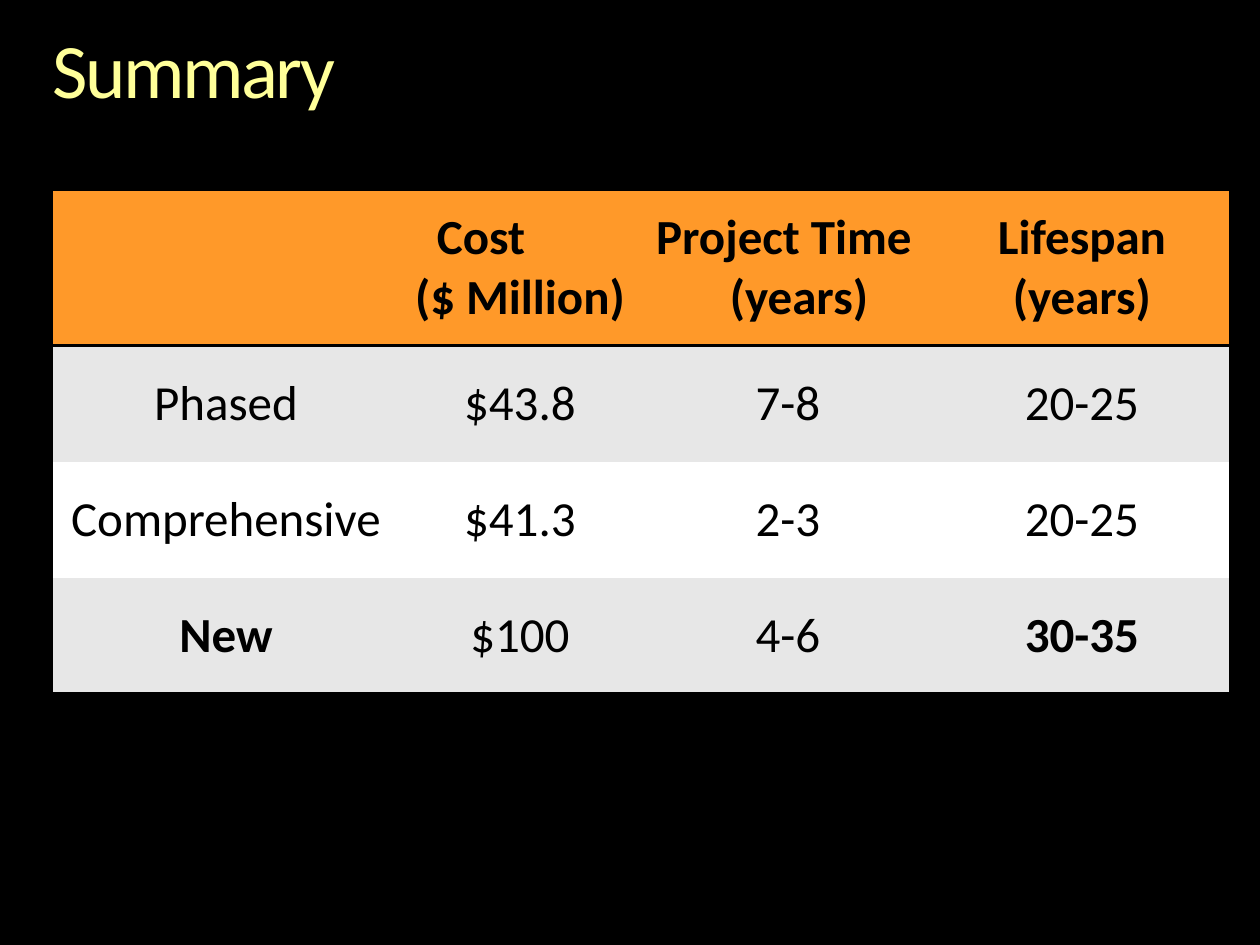
from dataclasses import dataclass

import lxml.etree
import pptx
import pptx.dml.color
import pptx.enum.text
import pptx.oxml.ns
import pptx.util

EMU_PER_PX = 914400 / 126
FONT = "Calibri"
COLORS = {
    "background": "000000",
    "title": "FFFF99",
    "header": "FF9929",
    "band": "E7E7E7",
    "plain": "FFFFFF",
    "text": "000000",
    "rule": "000000",
}
NO_STYLE = "{2D5ABB26-0587-4C30-8999-92F81FD0307C}"
COLUMN_WIDTHS = [346, 242, 294, 294]
ROW_HEIGHTS = [157, 116, 116, 116]


@dataclass(frozen=True)
class Line:
    text: str
    left: int = 0
    right: int = 0
    bold: bool = False


@dataclass(frozen=True)
class Row:
    cells: list[list[Line]]
    fill: str
    rules: tuple[str, ...] = ()


def px(length: int) -> int:
    return round(length * EMU_PER_PX)


def color(name: str) -> pptx.dml.color.RGBColor:
    return pptx.dml.color.RGBColor.from_string(COLORS[name])


def values(*texts: str, bold: tuple[str, ...] = ()) -> list[list[Line]]:
    return [[Line(text, bold=text in bold)] for text in texts]


HEADINGS = [
    [],
    [Line("Cost", right=78, bold=True), Line("($ Million)", bold=True)],
    [Line("Project Time", right=8, bold=True), Line("(years)", left=22, bold=True)],
    [Line("Lifespan (years)", bold=True)],
]
ROWS = [
    Row(HEADINGS, "header", ("lnT", "lnB")),
    Row(values("Phased", "$43.8", "7-8", "20-25"), "band"),
    Row(values("Comprehensive", "$41.3", "2-3", "20-25"), "plain"),
    Row(values("New", "$100", "4-6", "30-35", bold=("New", "30-35")), "band", ("lnB",)),
]


def add_run(paragraph, text: str, size: int, color_name: str, bold: bool = False):
    run = paragraph.add_run()
    run.text = text
    run.font.name = FONT
    run.font.size = pptx.util.Pt(size)
    run.font.bold = bold
    run.font.color.rgb = color(color_name)
    return run


def add_rule(cell, side: str) -> None:
    qn = pptx.oxml.ns.qn
    properties = cell._tc.get_or_add_tcPr()
    line = lxml.etree.SubElement(properties, qn(f"a:{side}"), w=str(pptx.util.Pt(2)))
    fill = lxml.etree.SubElement(line, qn("a:solidFill"))
    lxml.etree.SubElement(fill, qn("a:srgbClr"), val=COLORS["rule"])


def fill_cell(cell, lines: list[Line], row: Row) -> None:
    for side in row.rules:
        add_rule(cell, side)
    cell.fill.solid()
    cell.fill.fore_color.rgb = color(row.fill)
    cell.vertical_anchor = pptx.enum.text.MSO_ANCHOR.MIDDLE
    for index, line in enumerate(lines):
        frame = cell.text_frame
        paragraph = frame.add_paragraph() if index else frame.paragraphs[0]
        paragraph.alignment = pptx.enum.text.PP_ALIGN.CENTER
        properties = paragraph._p.get_or_add_pPr()
        properties.set("marL", str(px(line.left)))
        properties.set("marR", str(px(line.right)))
        add_run(paragraph, line.text, 28, "text", line.bold)


def add_title(slide, text: str) -> None:
    shape = slide.shapes.add_textbox(px(53), px(32), px(1155), px(84))
    frame = shape.text_frame
    frame.word_wrap = True
    frame.margin_left = frame.margin_right = 0
    frame.margin_top = frame.margin_bottom = 0
    paragraph = frame.paragraphs[0]
    paragraph.line_spacing = 0.9
    run = add_run(paragraph, text, 44, "title")
    run.font._element.set("spc", "-150")


def add_summary_table(slide, rows: list[Row]) -> None:
    shape = slide.shapes.add_table(
        len(rows), len(COLUMN_WIDTHS), px(53), px(189),
        px(sum(COLUMN_WIDTHS)), px(sum(ROW_HEIGHTS)))
    table = shape.table
    table.first_row = table.horz_banding = False
    table._tbl.tblPr.find(pptx.oxml.ns.qn("a:tableStyleId")).text = NO_STYLE
    for column, width in zip(table.columns, COLUMN_WIDTHS):
        column.width = px(width)
    for table_row, height, row in zip(table.rows, ROW_HEIGHTS, rows):
        table_row.height = px(height)
        for cell, lines in zip(table_row.cells, row.cells):
            fill_cell(cell, lines, row)


def main() -> None:
    presentation = pptx.Presentation()
    presentation.slide_width = px(1260)
    presentation.slide_height = px(945)
    slide = presentation.slides.add_slide(presentation.slide_layouts[6])

    # Background
    slide.background.fill.solid()
    slide.background.fill.fore_color.rgb = color("background")

    # Title and table
    add_title(slide, "Summary")
    add_summary_table(slide, ROWS)
    presentation.save("out.pptx")


if __name__ == "__main__":
    main()
